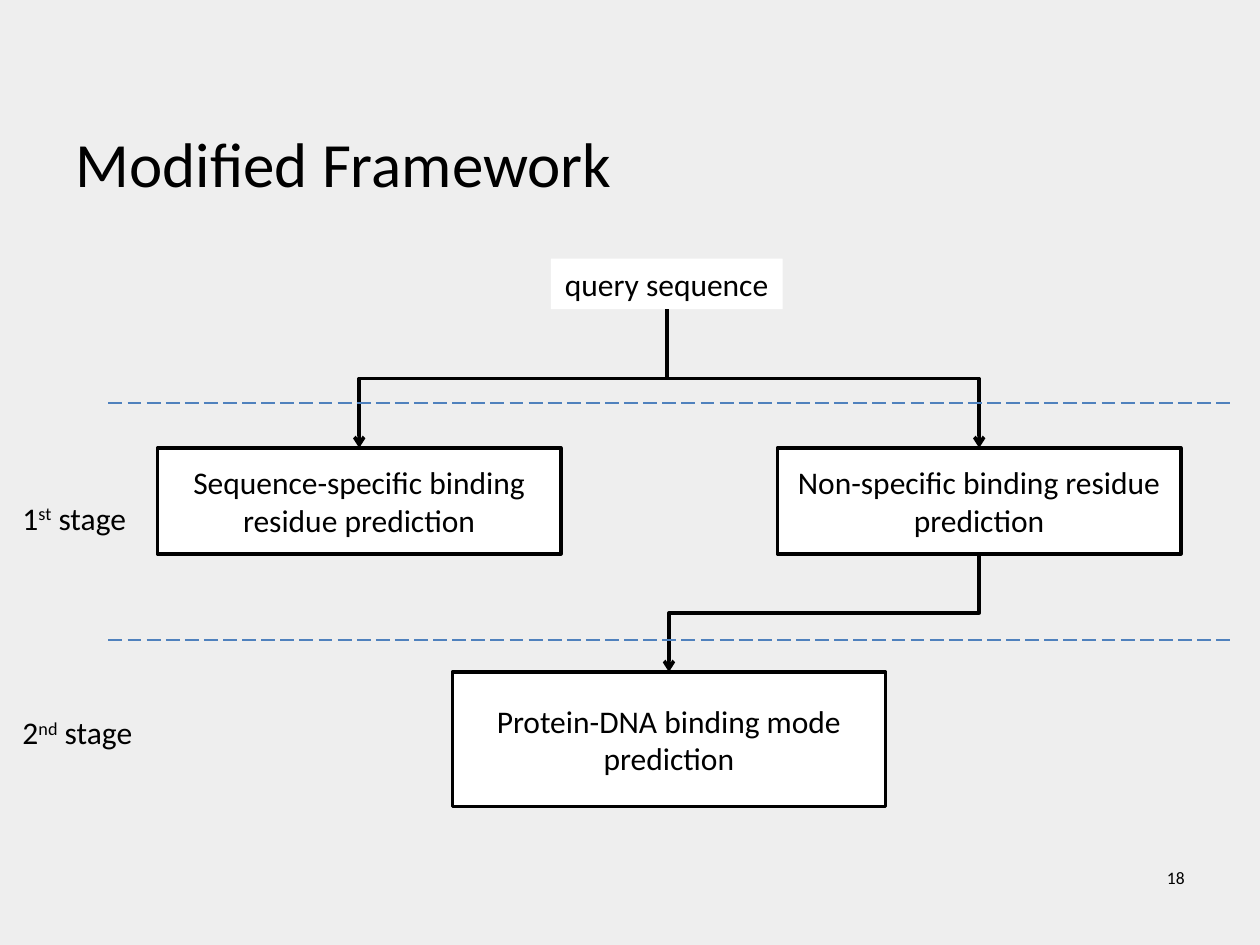
from lxml import etree
from pptx import Presentation
from pptx.dml.color import RGBColor
from pptx.enum import dml, shapes, text
from pptx.oxml.ns import qn
from pptx.util import Pt

INK, PAPER, DIVIDER = "000000", "FFFFFF", "4F81BD"
LEFT, CENTER, RIGHT = text.PP_ALIGN.LEFT, text.PP_ALIGN.CENTER, text.PP_ALIGN.RIGHT
TOP, MIDDLE, BOTTOM = text.MSO_ANCHOR.TOP, text.MSO_ANCHOR.MIDDLE, text.MSO_ANCHOR.BOTTOM


def paint(color_format, hex_color):
    color_format.rgb = RGBColor.from_string(hex_color)


def write(holder, pieces, size, align, anchor, wrap=True):
    frame = holder.text_frame
    settings = {"word_wrap": wrap, "vertical_anchor": anchor, "auto_size": text.MSO_AUTO_SIZE.NONE}
    if not wrap:
        settings["auto_size"] = text.MSO_AUTO_SIZE.SHAPE_TO_FIT_TEXT
    for key, value in settings.items():
        setattr(frame, key, value)
    paragraph = frame.paragraphs[0]
    paragraph.alignment = align
    for words, raised in pieces:
        run = paragraph.add_run()
        run.text = words
        for key, value in {"size": Pt(size), "name": "Calibri"}.items():
            setattr(run.font, key, value)
        paint(run.font.color, INK)
        if raised:
            run.font._element.set("baseline", "30000")


deck = Presentation()
deck.slide_width, deck.slide_height = Pt(720), Pt(540)
slide = deck.slides.add_slide(deck.slide_layouts[5])
slide.background.fill.solid()
paint(slide.background.fill.fore_color, "EEEEEE")

heading = slide.shapes.title
for side, length in {"left": 36, "top": 28, "width": 648, "height": 90}.items():
    setattr(heading, side, Pt(length))
write(heading, [("Modified Framework", False)], 36, LEFT, BOTTOM)

page_number = slide.shapes.add_textbox(Pt(516), Pt(492), Pt(168), Pt(37.5))
write(page_number, [("18", False)], 10, RIGHT, TOP)

query = slide.shapes.add_textbox(Pt(314.75), Pt(147.75), Pt(132.5), Pt(29))
query.fill.solid()
paint(query.fill.fore_color, PAPER)
write(query, [("query sequence", False)], 18, CENTER, TOP, wrap=False)

steps = [
    ("Sequence-specific binding residue prediction", 90, 256, 230.5, 60.5),
    ("Non-specific binding residue prediction", 444.25, 256, 230.5, 60.5),
    ("Protein-DNA binding mode prediction", 258.5, 384, 247.5, 77),
]
for label, left, top, width, height in steps:
    step = slide.shapes.add_shape(
        shapes.MSO_SHAPE.FLOWCHART_PROCESS, Pt(left), Pt(top), Pt(width), Pt(height))
    step.shadow.inherit = False
    step.fill.solid()
    paint(step.fill.fore_color, PAPER)
    paint(step.line.color, INK)
    step.line.width = Pt(2)
    write(step, [(label, False)], 18, CENTER, MIDDLE)

specific_x, general_x, mode_x = [left + width / 2 for _, left, _, width, _ in steps]
query_x = 381
flows = [
    (query_x, 176.75, specific_x, 256),
    (query_x, 176.75, general_x, 256),
    (general_x, 316.5, mode_x, 384),
]
for start_x, start_y, end_x, end_y in flows:
    middle_x, middle_y = (start_x + end_x) / 2, (start_y + end_y) / 2
    rightward = end_x > start_x
    reach = (end_y - start_y) / 2 * (-1 if rightward else 1)
    spread = abs(end_x - start_x) / 2
    flow = slide.shapes.add_connector(
        shapes.MSO_CONNECTOR.ELBOW, Pt(middle_x - reach), Pt(middle_y - spread),
        Pt(middle_x + reach), Pt(middle_y + spread))
    flow._element.spPr.find(qn("a:xfrm")).set("rot", str((270 if rightward else 90) * 60000))
    paint(flow.line.color, INK)
    flow.line.width = Pt(2)
    etree.SubElement(flow.line._get_or_add_ln(), qn("a:tailEnd"), type="arrow")
    etree.SubElement(flow._element.spPr, qn("a:effectLst"))

for divider_y in (230.5, 365.75):
    divider = slide.shapes.add_connector(
        shapes.MSO_CONNECTOR.STRAIGHT, Pt(62), Pt(divider_y), Pt(703.5), Pt(divider_y))
    paint(divider.line.color, DIVIDER)
    divider.line.width = Pt(1)
    divider.line.dash_style = dml.MSO_LINE.LONG_DASH
    etree.SubElement(divider._element.spPr, qn("a:effectLst"))

for number, suffix, top, width in (("1", "st", 281.5, 77), ("2", "nd", 404, 81.5)):
    stage = slide.shapes.add_textbox(Pt(5.75), Pt(top), Pt(width), Pt(29))
    write(stage, [(number, False), (suffix, True), (" stage", False)], 18, LEFT, TOP, wrap=False)

deck.save("out.pptx")
